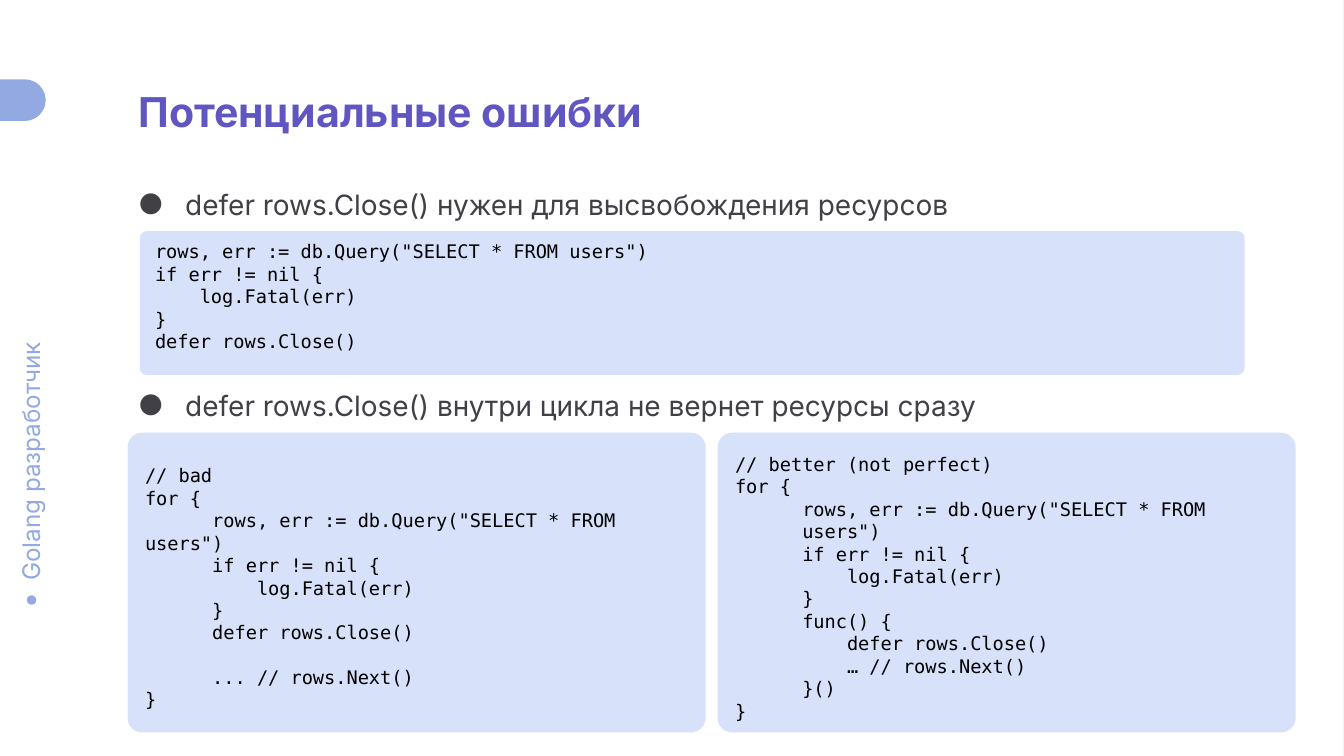
from pptx import Presentation
from pptx.dml.color import RGBColor
from pptx.enum.shapes import MSO_SHAPE
from pptx.enum.text import MSO_ANCHOR, PP_ALIGN
from pptx.oxml import parse_xml
from pptx.oxml.ns import nsdecls
from pptx.util import Inches, Pt

COLORS = {"back": "F1F4FF", "page": "FFFFFF", "accent": "92A9E2",
          "title": "6056C2", "body": "414046", "panel": "D7E1F9", "code": "000000"}
SANS, MONO = "Inter", "DejaVu Sans Mono"
CODE_LINE = 11.64  # height of one code line in points

TITLE = "Потенциальные ошибки"
COURSE = "Golang разработчик"

# Bullets: top, text
BULLETS = [
    (1.35, "defer rows.Close() нужен для высвобождения ресурсов"),
    (2.84, "defer rows.Close() внутри цикла не вернет ресурсы сразу"),
]

# Code lines: (left margin, first-line indent, blank lines above), text
FLUSH, BLOCK, FIRST, AFTER_GAP = (0, 0, 0), (0.5, 0, 0), (0, 0.5, 0), (0.5, 0, 1)
QUERY = 'rows, err := db.Query("SELECT * FROM users")'
CHECK = ["if err != nil {", "    log.Fatal(err)", "}"]
CLOSE = "defer rows.Close()"

QUERY_CODE = [(FLUSH, line) for line in [QUERY, *CHECK, CLOSE]]
BAD_CODE = [
    (FLUSH, "// bad"), (FLUSH, "for {"), (FIRST, QUERY),
    *[(BLOCK, line) for line in [*CHECK, CLOSE]],
    (AFTER_GAP, "... // rows.Next()"), (FLUSH, "}"),
]
BETTER_CODE = [
    (FLUSH, "// better (not perfect)"), (FLUSH, "for {"),
    *[(BLOCK, line) for line in [QUERY, *CHECK, "func() {", "    " + CLOSE,
                                 "    … // rows.Next()", "}()"]],
    (FLUSH, "}"),
]

# Panels: position, top inset, code
PANELS = [
    ((1.04, 1.72, 8.22, 1.07), 0, QUERY_CODE),
    ((0.95, 3.22, 4.3, 2.23), 0.17, BAD_CODE),
    ((5.34, 3.22, 4.3, 2.23), 0.17, BETTER_CODE),
]


def color(name):
    return RGBColor.from_string(COLORS[name])


def add_block(slide, kind, box, fill, corner=None):
    block = slide.shapes.add_shape(kind, *map(Inches, box))
    block.shadow.inherit = False
    block.fill.solid()
    block.fill.fore_color.rgb = color(fill)
    block.line.fill.background()
    if corner is not None:
        block.adjustments[0] = corner
    return block


def set_frame(frame, top, bottom, anchor=MSO_ANCHOR.TOP):
    frame.word_wrap = True
    frame.vertical_anchor = anchor
    frame.margin_left = frame.margin_right = Inches(0.1)
    frame.margin_top, frame.margin_bottom = Inches(top), Inches(bottom)


def add_run(paragraph, text, size, font, tint, bold=False):
    paragraph.alignment = PP_ALIGN.LEFT
    run = paragraph.add_run()
    run.text = text
    run.font.size, run.font.name, run.font.bold = Pt(size), font, bold
    run.font.color.rgb = color(tint)


def set_indent(paragraph, margin, indent):
    properties = paragraph._p.get_or_add_pPr()
    properties.set("marL", str(Inches(margin)))
    properties.set("indent", str(Inches(indent)))
    return properties


def add_bullet(slide, top, text):
    bullet = slide.shapes.add_textbox(*map(Inches, (0.78, top, 8.01, 0.36)))
    set_frame(bullet.text_frame, 0.05, 0.05)
    paragraph = bullet.text_frame.paragraphs[0]
    properties = set_indent(paragraph, 0.5, -0.35)
    for xml in (f'<a:buClr {nsdecls("a")}><a:srgbClr val="{COLORS["body"]}"/></a:buClr>',
                f'<a:buSzPts {nsdecls("a")} val="1500"/>',
                f'<a:buFont {nsdecls("a")} typeface="{SANS}"/>',
                f'<a:buChar {nsdecls("a")} char="●"/>'):
        properties.append(parse_xml(xml))
    add_run(paragraph, text, 15, SANS, "body")


def add_code_panel(slide, box, top_inset, code):
    panel = add_block(slide, MSO_SHAPE.ROUNDED_RECTANGLE, box, "panel", 0.048)
    frame = panel.text_frame
    set_frame(frame, top_inset, 0.1, MSO_ANCHOR.MIDDLE)
    for number, ((margin, indent, gap), line) in enumerate(code):
        paragraph = frame.add_paragraph() if number else frame.paragraphs[0]
        set_indent(paragraph, margin, indent)
        if gap:
            paragraph.space_before = Pt(gap * CODE_LINE)
        add_run(paragraph, line, 10, MONO, "code")


def main():
    deck = Presentation()
    deck.slide_width = Inches(10)
    deck.slide_height = deck.slide_width * 9 // 16
    slide = deck.slides.add_slide(deck.slide_layouts[5])
    slide.background.fill.solid()
    slide.background.fill.fore_color.rgb = color("back")

    # Page and side decoration
    add_block(slide, MSO_SHAPE.RECTANGLE, (-0.01, 0, 10, 5.63), "page")
    course = slide.shapes.add_textbox(*map(Inches, (-0.77, 3.21, 2, 0.42)))
    course.rotation = 270
    set_frame(course.text_frame, 0.1, 0.1)
    add_run(course.text_frame.paragraphs[0], COURSE, 13, SANS, "accent")
    add_block(slide, MSO_SHAPE.OVAL, (0.2, 4.43, 0.07, 0.07), "accent")
    add_block(slide, MSO_SHAPE.ROUNDED_RECTANGLE, (-0.38, 0.59, 0.72, 0.31), "accent", 0.5)

    # Title, raised above the page
    title = slide.shapes.title
    slide.shapes._spTree.append(title._element)
    title.left, title.top, title.width, title.height = map(Inches, (0.93, 0.59, 6.12, 0.47))
    set_frame(title.text_frame, 0.05, 0.05)
    add_run(title.text_frame.paragraphs[0], TITLE, 22, SANS, "title", bold=True)

    # Bullets and code
    for top, text in BULLETS:
        add_bullet(slide, top, text)
    for box, top_inset, code in PANELS:
        add_code_panel(slide, box, top_inset, code)

    deck.save("out.pptx")


if __name__ == "__main__":
    main()
